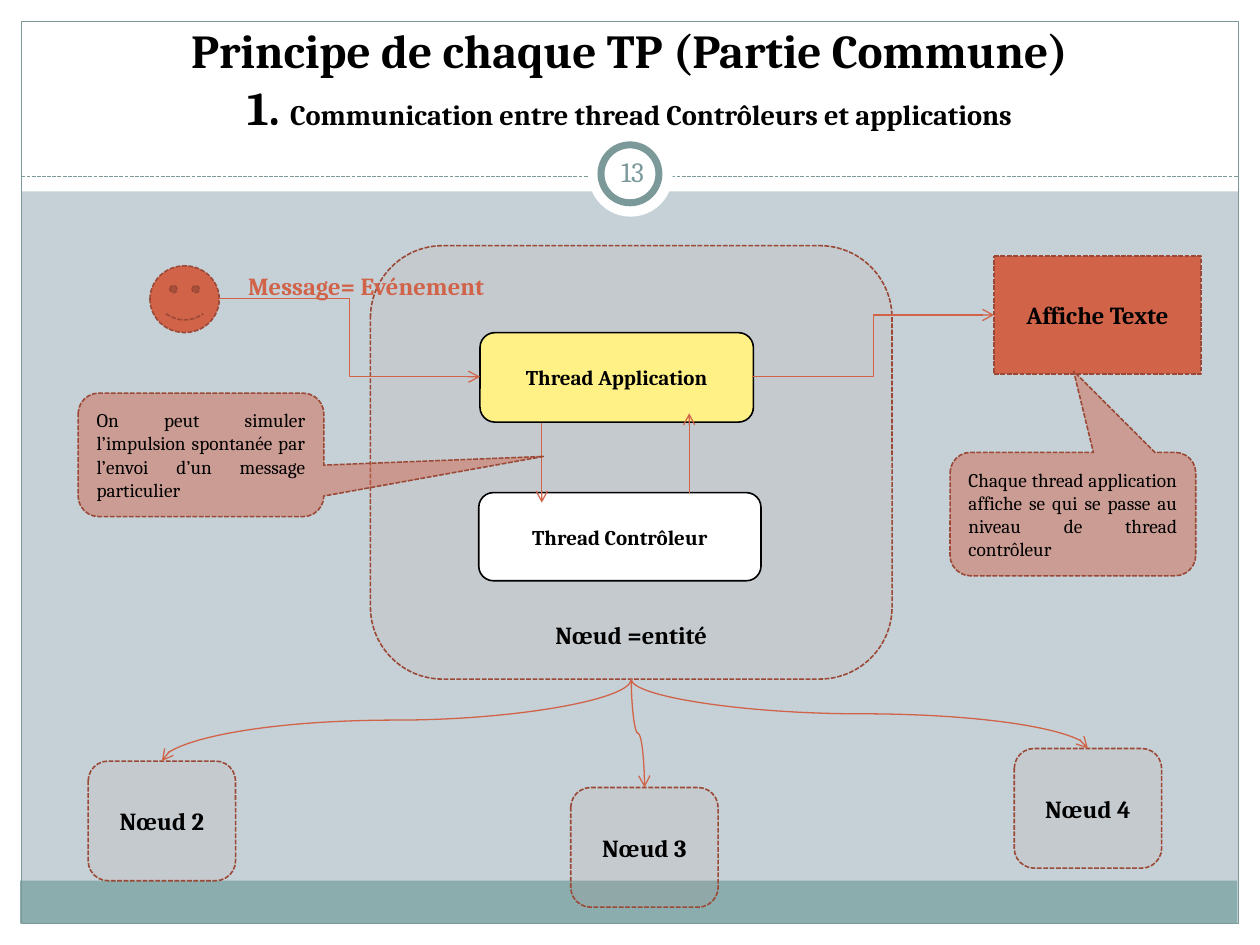
"""Build the slide on communication between controller and application threads."""
from lxml.etree import SubElement
from pptx import Presentation
from pptx.dml.color import RGBColor
from pptx.enum.dml import MSO_LINE
from pptx.enum.shapes import MSO_CONNECTOR as Link, MSO_SHAPE as Shape
from pptx.enum.text import MSO_ANCHOR as Anchor, PP_ALIGN as Align
from pptx.oxml.ns import qn
from pptx.util import Inches, Pt

FONT = "Cambria"
BLACK = RGBColor(0x00, 0x00, 0x00)
WHITE = RGBColor(0xFF, 0xFF, 0xFF)
SKY = RGBColor(0xC5, 0xD1, 0xD7)
TEAL = RGBColor(0x7C, 0x99, 0x9A)
FOOTER = RGBColor(0x8C, 0xAD, 0xAE)
ORANGE = RGBColor(0xD1, 0x63, 0x49)
BROWN = RGBColor(0x9B, 0x49, 0x36)
YELLOW = RGBColor(0xFF, 0xF1, 0x85)

TITLE = [("Principe de chaque TP (Partie Commune)\v1. ", 27),
         ("Communication entre thread Contrôleurs et applications", 16.2)]
MARGINS = [(0, 7.33, 10, 0.17), (0, 0, 10, 1.52), (0, 0, 0.17, 7.5), (9.83, 0, 0.17, 7.5)]
ENTITY = (2.94, 1.95, 4.14, 3.44)
THREADS = [("Thread Application", (3.81, 2.64, 2.17, 0.71), YELLOW),
           ("Thread Contrôleur", (3.8, 3.91, 2.24, 0.7), WHITE)]
NODE_SIZE = (1.17, 0.95)
NODES = [("Nœud 2", (0.7, 6.04)), ("Nœud 3", (4.53, 6.25)), ("Nœud 4", (8.05, 5.94))]
ARROWS = [(Link.ELBOW, (1.74, 2.37), (3.81, 2.99)),
          (Link.STRAIGHT, (4.3, 3.36), (4.3, 3.99)),
          (Link.STRAIGHT, (5.47, 3.91), (5.47, 3.28)),
          (Link.ELBOW, (5.97, 2.99), (7.89, 2.5))]
CALLOUT_SIZE = (1.95, 0.98)
CALLOUTS = [("On peut simuler l’impulsion spontanée par l’envoi d’un message particulier",
             (0.62, 3.12), (1.394, 0.013, 0.167)),
            ("Chaque thread application affiche se qui se passe au niveau de thread contrôleur",
             (7.54, 3.59), (0.003, -1.157, 0.167))]

presentation = Presentation()
presentation.slide_width, presentation.slide_height = Inches(10), Inches(7.5)
slide = presentation.slides.add_slide(presentation.slide_layouts[6])
slide.background.fill.solid()
slide.background.fill.fore_color.rgb = SKY


def write(shape, text, size=14, color=BLACK, bold=True, align=Align.CENTER,
          anchor=Anchor.MIDDLE, wrap=True, **margins):
    """Write a string, or a list of (string, size) runs, into a shape."""
    frame = shape.text_frame
    frame.word_wrap = wrap
    frame.vertical_anchor = anchor
    for side, value in margins.items():
        setattr(frame, f"margin_{side}", Inches(value))
    paragraph = frame.paragraphs[0]
    paragraph.alignment = align
    for index, (words, points) in enumerate([(text, size)] if isinstance(text, str) else text):
        for number, line in enumerate(words.split("\v")):
            if number:
                paragraph.add_line_break()
            run = paragraph.add_run()
            run.text = line
            run.font.name, run.font.size, run.font.bold = FONT, Pt(points), bold
            run.font.color.rgb = color


def add_text(box, text, **style):
    """Add a text box."""
    write(slide.shapes.add_textbox(*map(Inches, box)), text, **style)


def add_shape(kind, box, fill=None, alpha=None, line=None, width=0.9, dashed=False):
    """Add a preset shape with its fill and outline."""
    shape = slide.shapes.add_shape(kind, *map(Inches, box))
    shape.shadow.inherit = False
    if fill is None:
        shape.fill.background()
    else:
        shape.fill.solid()
        shape.fill.fore_color.rgb = fill
    if alpha is not None:
        color = shape.fill._xPr.find(qn("a:solidFill"))[0]
        SubElement(color, qn("a:alpha")).set("val", str(alpha * 1000))
    if line is None:
        shape.line.fill.background()
    else:
        shape.line.color.rgb = line
        shape.line.width = Pt(width)
        if dashed:
            shape.line.dash_style = MSO_LINE.SQUARE_DOT
    return shape


def add_dashed(kind, box, alpha=None):
    """Add an orange shape with a dashed brown outline."""
    return add_shape(kind, box, ORANGE, alpha, BROWN, dashed=True)


def add_line(kind, start, end, color=ORANGE, arrow=True):
    """Add a connector, with an open arrowhead at its end by default."""
    connector = slide.shapes.add_connector(kind, *map(Inches, (*start, *end)))
    connector.line.color.rgb = color
    connector.line.width = Pt(0.75)
    if arrow:
        SubElement(connector.line._get_or_add_ln(), qn("a:tailEnd")).set("type", "arrow")
    SubElement(connector._element.spPr, qn("a:effectLst"))
    return connector


def add_falling_curve(start, end):
    """Add a curve that leaves and arrives vertically, as a turned connector."""
    across, down = end[0] - start[0], end[1] - start[1]
    middle_x, middle_y = (start[0] + end[0]) / 2, (start[1] + end[1]) / 2
    turn, side = (90, 1) if across < 0 else (270, -1)
    connector = add_line(Link.CURVE,
                         (middle_x - side * down / 2, middle_y - abs(across) / 2),
                         (middle_x + side * down / 2, middle_y + abs(across) / 2))
    connector._element.spPr.find(qn("a:xfrm")).set("rot", str(turn * 60000))


for margin in MARGINS:
    add_shape(Shape.RECTANGLE, margin, WHITE)
add_shape(Shape.RECTANGLE, (0.16, 6.99, 9.66, 0.34), FOOTER)
add_shape(Shape.RECTANGLE, (0.17, 0.17, 9.66, 7.16), line=TEAL, width=0.75)
divider = add_line(Link.STRAIGHT, (0.17, 1.4), (9.83, 1.4), TEAL, arrow=False)
divider.line.dash_style = MSO_LINE.SQUARE_DOT
add_shape(Shape.OVAL, (4.67, 1.05, 0.67, 0.67), WHITE)
add_shape(Shape.OVAL, (4.77, 1.15, 0.46, 0.46), WHITE, line=TEAL, width=4)

entity = add_dashed(Shape.FLOWCHART_ALTERNATE_PROCESS, ENTITY, alpha=6)
write(entity, "Nœud =entité", anchor=Anchor.BOTTOM, bottom=0.07)
add_text((0.33, 0.29, 9.33, 0.83), TITLE, anchor=Anchor.BOTTOM)
add_text((4.77, 1.12, 0.5, 0.48), "13", size=16, color=TEAL, bold=False,
         left=0.05, top=0.05, right=0.05, bottom=0.05)

for label, box, fill in THREADS:
    write(add_shape(Shape.ROUNDED_RECTANGLE, box, fill, line=BLACK), label, size=12)
add_dashed(Shape.SMILEY_FACE, (1.19, 2.11, 0.55, 0.53))
add_text((1.87, 2.1, 2.38, 0.34), "Message= Evénement", color=ORANGE,
         align=Align.LEFT, anchor=Anchor.TOP, wrap=False)
write(add_dashed(Shape.FLOWCHART_PROCESS, (7.89, 2.03, 1.64, 0.94)), "Affiche Texte")
for kind, start, end in ARROWS:
    add_line(kind, start, end)

entity_foot = (ENTITY[0] + ENTITY[2] / 2, ENTITY[1] + ENTITY[3])
for label, (left, top) in NODES:
    node = add_dashed(Shape.FLOWCHART_ALTERNATE_PROCESS, (left, top, *NODE_SIZE), alpha=6)
    write(node, label)
    add_falling_curve(entity_foot, (left + NODE_SIZE[0] / 2, top))

for text, corner, adjustments in CALLOUTS:
    callout = add_dashed(Shape.ROUNDED_RECTANGULAR_CALLOUT, (*corner, *CALLOUT_SIZE), alpha=48)
    for index, value in enumerate(adjustments):
        callout.adjustments[index] = value
    write(callout, text, size=11, bold=False, align=Align.JUSTIFY)

presentation.save("out.pptx")
